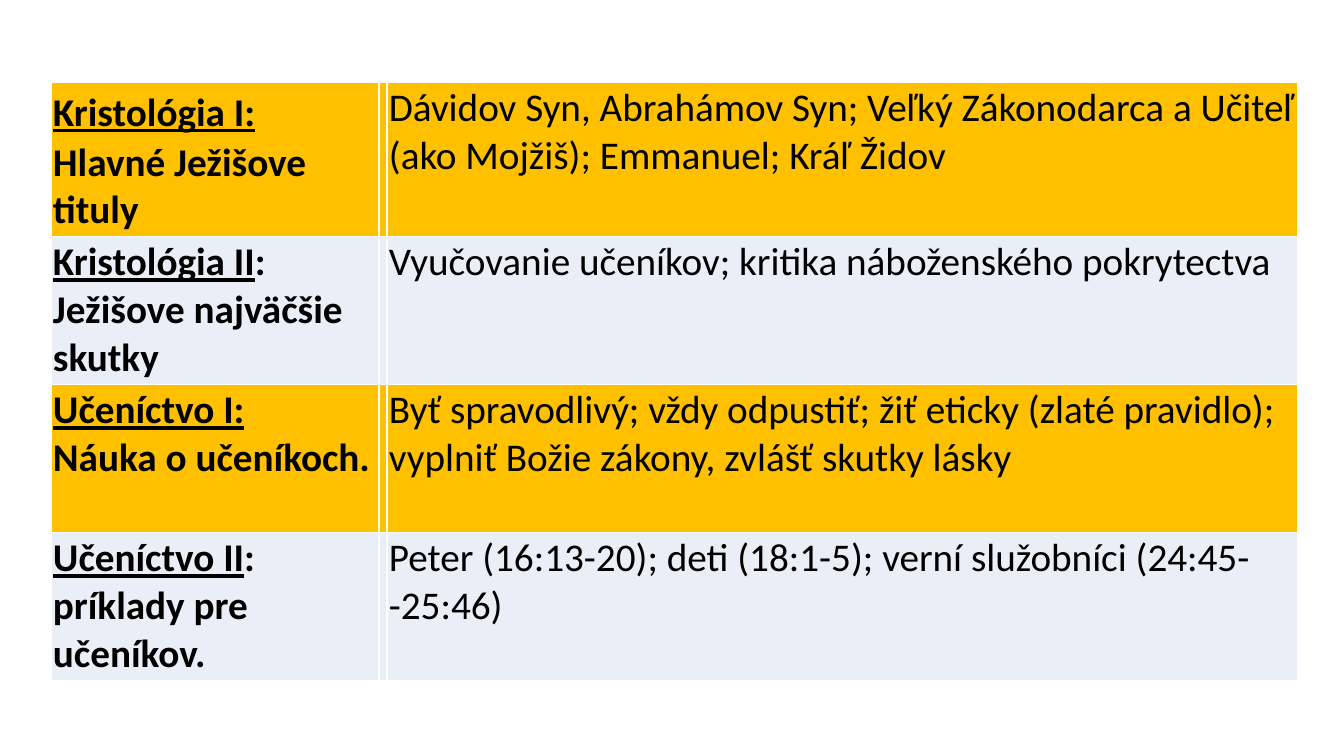
"""Build a slide with a table of Christology and discipleship themes."""
import dataclasses

import lxml.etree
import pptx
import pptx.dml.color
import pptx.oxml.ns
import pptx.util


@dataclasses.dataclass(frozen=True)
class Theme:
    gold: str = "FFC000"
    pale: str = "EAEFF7"
    border: str = "FFFFFF"
    ink: str = "000000"
    font: str = "Calibri"
    body_size: int = 28
    spacer_size: int = 32
    border_width: int = 1
    cell_margin: int = 2


@dataclasses.dataclass(frozen=True)
class Topic:
    heading: str
    suffix: str
    label: str
    content: str
    height: int
    suffix_size: int = Theme.body_size


THEME = Theme()
SLIDE_SIZE = (1344, 756)
TABLE_ORIGIN = (51, 82)
COLUMN_WIDTHS = (328, 7, 911)
TOPICS = (
    Topic("Kristológia I:", " ", "Hlavné Ježišove tituly",
          "Dávidov Syn, Abrahámov Syn; Veľký Zákonodarca a Učiteľ "
          "(ako Mojžiš); Emmanuel; Kráľ Židov", 154, THEME.spacer_size),
    Topic("Kristológia II", ":", "Ježišove najväčšie skutky",
          "Vyučovanie učeníkov; kritika náboženského pokrytectva", 148),
    Topic("Učeníctvo I:", "", "Náuka o učeníkoch.",
          "Byť spravodlivý; vždy odpustiť; žiť eticky (zlaté pravidlo); "
          "vyplniť Božie zákony, zvlášť skutky lásky", 148),
    Topic("Učeníctvo II", ":", "príklady pre učeníkov.",
          "Peter (16:13-20); deti (18:1-5); verní služobníci (24:45--25:46)", 147),
)


def px(length: int) -> pptx.util.Emu:
    """Convert whole pixels to EMU."""
    return pptx.util.Emu(round(length * 914400 / 100.8))


def add_text(paragraph, text: str, *, size: int = THEME.body_size,
             bold: bool = False, underline: bool = False) -> None:
    """Append a formatted run to a paragraph."""
    run = paragraph.add_run()
    run.text = text
    run.font.name = THEME.font
    run.font.size = pptx.util.Pt(size)
    run.font.bold = bold
    run.font.underline = underline
    run.font.color.rgb = pptx.dml.color.RGBColor.from_string(THEME.ink)


def style_cell(cell, fill: str) -> None:
    """Set the margins, fill and borders of a cell."""
    cell.margin_left = cell.margin_right = px(THEME.cell_margin)
    cell.margin_top = cell.margin_bottom = px(THEME.cell_margin)
    cell.fill.solid()
    cell.fill.fore_color.rgb = pptx.dml.color.RGBColor.from_string(fill)
    qn = pptx.oxml.ns.qn
    properties = cell._tc.get_or_add_tcPr()
    for position, side in enumerate(("lnL", "lnR", "lnT", "lnB")):
        line = lxml.etree.Element(
            qn(f"a:{side}"), w=str(pptx.util.Pt(THEME.border_width)))
        solid = lxml.etree.SubElement(line, qn("a:solidFill"))
        lxml.etree.SubElement(solid, qn("a:srgbClr"), val=THEME.border)
        properties.insert(position, line)


def fill_row(row, topic: Topic, fill: str) -> None:
    """Write one topic into a table row."""
    row.height = px(topic.height)
    for cell in row.cells:
        style_cell(cell, fill)
    label_cell, _, content_cell = row.cells
    label = label_cell.text_frame.paragraphs[0]
    add_text(label, topic.heading, bold=True, underline=True)
    if topic.suffix:
        add_text(label, topic.suffix, size=topic.suffix_size, bold=True)
    label.add_line_break()
    add_text(label, topic.label, bold=True)
    add_text(content_cell.text_frame.paragraphs[0], topic.content)


def main() -> None:
    """Create and save the presentation."""
    presentation = pptx.Presentation()
    presentation.slide_width, presentation.slide_height = map(px, SLIDE_SIZE)
    slide = presentation.slides.add_slide(presentation.slide_layouts[6])
    left, top = TABLE_ORIGIN
    themes = slide.shapes.add_table(
        len(TOPICS), len(COLUMN_WIDTHS), px(left), px(top),
        px(sum(COLUMN_WIDTHS)), px(sum(topic.height for topic in TOPICS))).table
    themes.first_row = False
    themes.horz_banding = False
    for column, width in zip(themes.columns, COLUMN_WIDTHS):
        column.width = px(width)
    for index, (row, topic) in enumerate(zip(themes.rows, TOPICS)):
        fill_row(row, topic, THEME.pale if index % 2 else THEME.gold)
    presentation.save("out.pptx")


if __name__ == "__main__":
    main()
